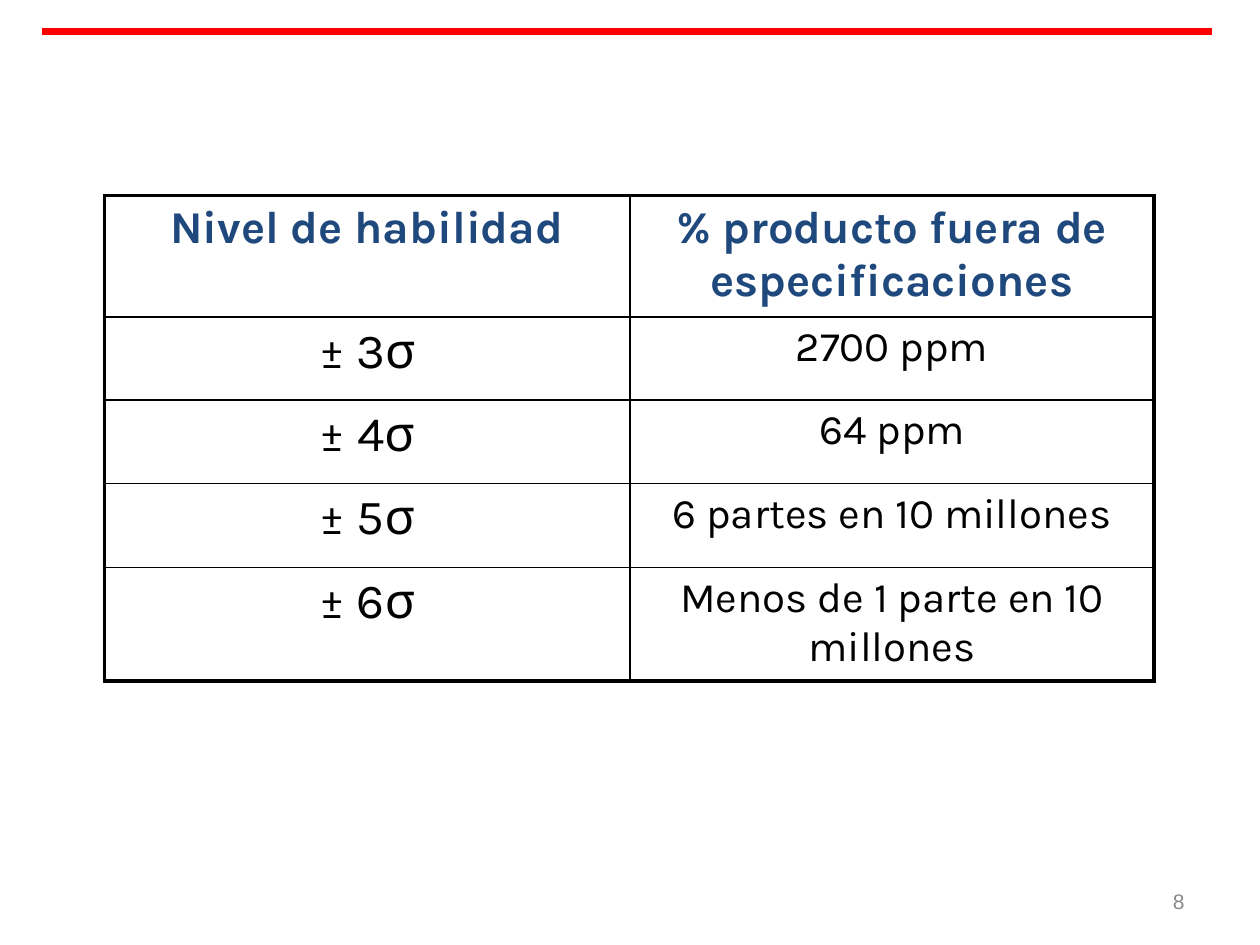
"""Build a slide with a table of sigma capability levels and defect rates."""
from lxml.etree import SubElement
from pptx import Presentation
from pptx.dml.color import RGBColor
from pptx.enum.shapes import MSO_CONNECTOR
from pptx.enum.text import MSO_ANCHOR, PP_ALIGN
from pptx.oxml.ns import qn
from pptx.util import Inches, Pt

RED = RGBColor(0xFF, 0x00, 0x00)
NAVY = RGBColor(0x1F, 0x49, 0x7D)
BLACK = RGBColor(0x00, 0x00, 0x00)
GRAY = RGBColor(0x89, 0x89, 0x89)

ROWS = [
    ("Nivel de habilidad", "% producto fuera de especificaciones"),
    ("± 3σ", "2700 ppm"),
    ("± 4σ", "64 ppm"),
    ("± 5σ", "6 partes en 10 millones"),
    ("± 6σ", "Menos de 1 parte en 10 millones"),
]
COL_WIDTHS = [4.17, 4.16]
ROW_HEIGHTS = [0.88, 0.66, 0.66, 0.67, 0.77]
HEADER = {"name": "Karla", "size": Pt(26), "bold": True}
LEVEL = {"name": "Karla", "size": Pt(28), "bold": False}
RATE = {"name": "Karla", "size": Pt(24), "bold": False}
NUMBER = {"name": "Arial", "size": Pt(12)}


def write(tf, text, align, fmt, color):
    p = tf.paragraphs[0]
    p.alignment = align
    r = p.add_run()
    r.text = text
    for key, value in fmt.items():
        setattr(r.font, key, value)
    r.font.color.rgb = color


def add_border(cell, side, width):
    ln = SubElement(cell._tc.get_or_add_tcPr(), qn(f"a:ln{side}"), w=str(Pt(width)))
    fill = SubElement(ln, qn("a:solidFill"))
    SubElement(fill, qn("a:srgbClr"), val=str(BLACK))


prs = Presentation()
prs.slide_width, prs.slide_height = Inches(10), Inches(7.5)
s = prs.slides.add_slide(prs.slide_layouts[6])

rule = s.shapes.add_connector(
    MSO_CONNECTOR.STRAIGHT, Inches(0.33), Inches(0.25), Inches(9.62), Inches(0.25))
rule.line.color.rgb = RED
rule.line.width = Pt(4.5)
SubElement(rule._element.spPr, qn("a:effectLst"))

number = s.shapes.add_textbox(Inches(7.17), Inches(6.95), Inches(2.33), Inches(0.4))
tf = number.text_frame
tf.word_wrap = True
tf.vertical_anchor = MSO_ANCHOR.MIDDLE
write(tf, "8", PP_ALIGN.RIGHT, NUMBER, GRAY)

table = s.shapes.add_table(
    len(ROWS), len(COL_WIDTHS), Inches(0.83), Inches(1.55),
    Inches(sum(COL_WIDTHS)), Inches(sum(ROW_HEIGHTS))).table
table.first_row = table.horz_banding = False
for column, width in zip(table.columns, COL_WIDTHS):
    column.width = Inches(width)
for row, height in zip(table.rows, ROW_HEIGHTS):
    row.height = Inches(height)

last_row, last_col = len(ROWS) - 1, len(COL_WIDTHS) - 1
for i, texts in enumerate(ROWS):
    for j, text in enumerate(texts):
        cell = table.cell(i, j)
        fmt = HEADER if i == 0 else (LEVEL, RATE)[j]
        write(cell.text_frame, text, PP_ALIGN.CENTER, fmt, NAVY if i == 0 else BLACK)
        outer = {"L": j == 0, "R": j == last_col, "T": i == 0, "B": i == last_row}
        for side, is_outer in outer.items():
            add_border(cell, side, 2.25 if is_outer else 1)
        cell.fill.background()

prs.save("out.pptx")
